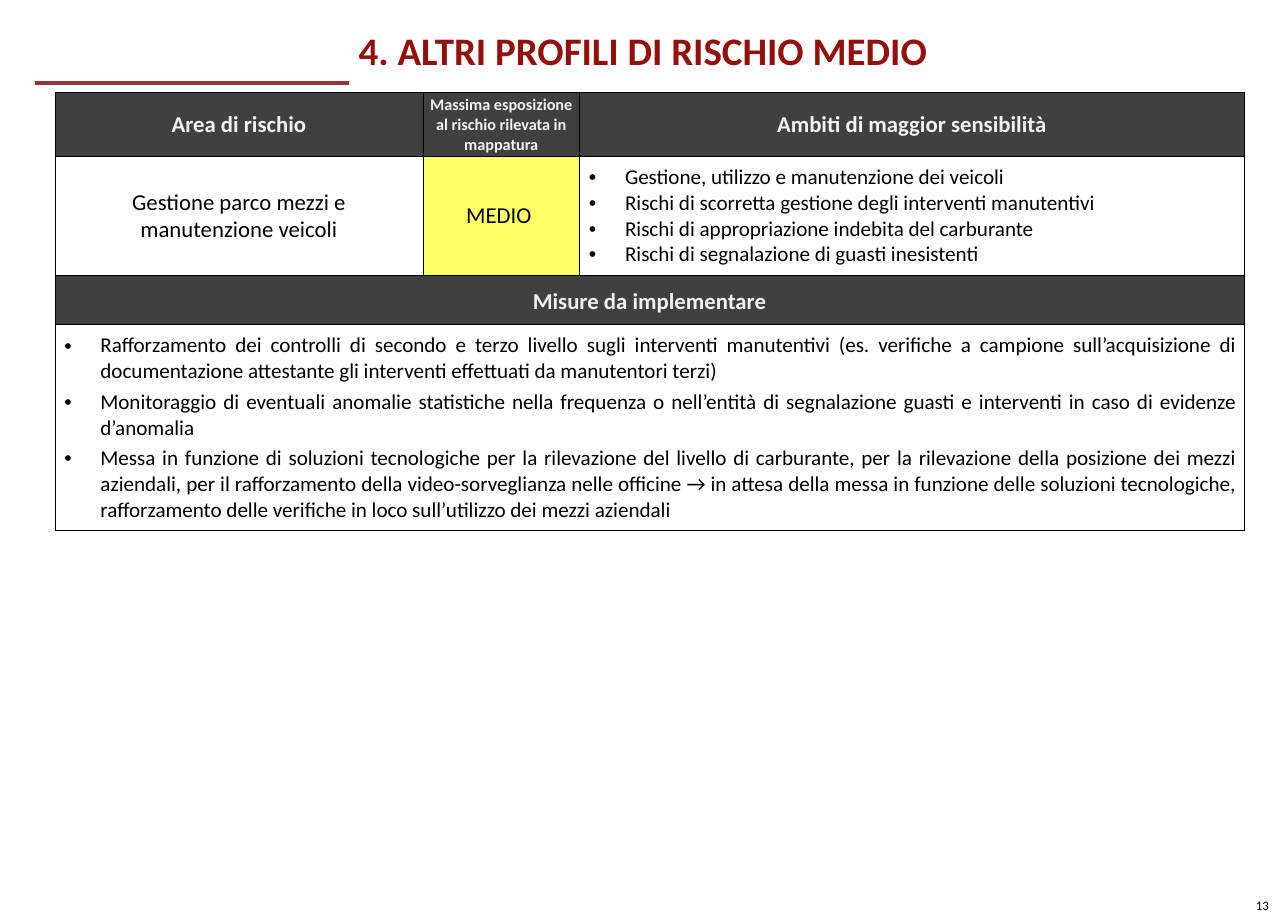
from pptx import Presentation
from pptx.dml.color import RGBColor
from pptx.enum.shapes import MSO_CONNECTOR
from pptx.enum.text import MSO_ANCHOR, PP_ALIGN
from pptx.oxml.ns import qn
from pptx.util import Inches, Pt
from lxml.etree import SubElement

TITLE = "4. ALTRI PROFILI DI RISCHIO MEDIO"
PAGE = "13"
HEADERS = [
    ("Area di rischio", 14),
    ("Massima esposizione al rischio rilevata in mappatura", 10),
    ("Ambiti di maggior sensibilità", 14),
]
AREA = "Gestione parco mezzi e manutenzione veicoli"
LEVEL = "MEDIO"
SENSITIVE = [
    "Gestione, utilizzo e manutenzione dei veicoli",
    "Rischi di scorretta gestione degli interventi manutentivi",
    "Rischi di appropriazione indebita del carburante",
    "Rischi di segnalazione di guasti inesistenti",
]
MEASURES_TITLE = "Misure da implementare"
MEASURES = [
    "Rafforzamento dei controlli di secondo e terzo livello sugli interventi manutentivi "
    "(es. verifiche a campione sull’acquisizione di documentazione attestante gli interventi "
    "effettuati da manutentori terzi)",
    "Monitoraggio di eventuali anomalie statistiche nella frequenza o nell’entità di "
    "segnalazione guasti e interventi in caso di evidenze d’anomalia",
    "Messa in funzione di soluzioni tecnologiche per la rilevazione del livello di carburante, "
    "per la rilevazione della posizione dei mezzi aziendali, per il rafforzamento della "
    "video-sorveglianza nelle officine → in attesa della messa in funzione delle soluzioni "
    "tecnologiche, rafforzamento delle verifiche in loco sull’utilizzo dei mezzi aziendali",
]
COLS = [3.15, 1.34, 5.69]
ROWS = [0.55, 1.02, 0.42, 1.76]
BLACK, WHITE, DARK, LIGHT = "000000", "FFFFFF", "404040", "F2F2F2"


def rgb(color):
    return RGBColor.from_string(color)


def style(p, size, color=BLACK, bold=False):
    for r in p.runs:
        r.font.name = "Calibri"
        r.font.size = Pt(size)
        r.font.bold = bold
        r.font.color.rgb = rgb(color)


def set_insets(box, left, top, right, bottom):
    box.margin_left, box.margin_top = Inches(left), Inches(top)
    box.margin_right, box.margin_bottom = Inches(right), Inches(bottom)


def add_bullet(p):
    pPr = p._p.get_or_add_pPr()
    pPr.set("marL", str(Inches(0.31)))
    pPr.set("indent", str(-Inches(0.31)))
    SubElement(pPr, qn("a:buFont"), typeface="Arial")
    SubElement(pPr, qn("a:buChar"), char="•")


def add_borders(cell, widths):
    tcPr = cell._tc.get_or_add_tcPr()
    for side, width in zip("LRTB", widths):
        ln = SubElement(tcPr, qn(f"a:ln{side}"), w=str(Pt(width)))
        SubElement(SubElement(ln, qn("a:solidFill")), qn("a:srgbClr"), val=BLACK)


def fill_cell(cell, lines, size, color=BLACK, bold=False, fill=WHITE, align=PP_ALIGN.CENTER,
              bullets=False, insets=(0.08, 0.07, 0.08, 0.07), after=0, spacing=None):
    cell.fill.solid()
    cell.fill.fore_color.rgb = rgb(fill)
    cell.vertical_anchor = MSO_ANCHOR.MIDDLE
    set_insets(cell, *insets)
    tf = cell.text_frame
    tf.text = "\n".join(lines)
    for p in tf.paragraphs:
        if bullets:
            add_bullet(p)
        p.alignment = align
        p.space_after = Pt(after)
        if spacing:
            p.line_spacing = Pt(spacing)
        style(p, size, color, bold)


prs = Presentation()
prs.slide_width, prs.slide_height = Pt(793.75), Pt(567)
s = prs.slides.add_slide(prs.slide_layouts[5])

rule = s.shapes.add_connector(MSO_CONNECTOR.STRAIGHT, Inches(0.3), Inches(0.71),
                              Inches(2.99), Inches(0.71))
rule.line.color.rgb = rgb("953735")
rule.line.width = Pt(2.25)
SubElement(rule._element.spPr, qn("a:effectLst"))

title = s.shapes.title
title.left, title.top = Inches(3.07), Inches(0.21)
title.width, title.height = Inches(7.6), Inches(0.59)
tf = title.text_frame
tf.text = TITLE
tf.word_wrap = True
tf.vertical_anchor = MSO_ANCHOR.TOP
set_insets(tf, 0, 0, 0, 0)
p = tf.paragraphs[0]
p.alignment = PP_ALIGN.LEFT
p.line_spacing = Pt(30)
style(p, 24, "93100D", True)

table = s.shapes.add_table(len(ROWS), len(COLS), Inches(0.47), Inches(0.79),
                           Inches(sum(COLS)), Inches(sum(ROWS))).table
table.first_row = table.horz_banding = False
for col, width in zip(table.columns, COLS):
    col.width = Inches(width)
for row, height in zip(table.rows, ROWS):
    row.height = Inches(height)
for i in range(len(ROWS)):
    for j in range(len(COLS)):
        right = 1 if (i, j) == (0, 2) else 0.5
        add_borders(table.cell(i, j), (0.5, right, 0.5 if i else 1, 0.5))
for i in (2, 3):
    table.cell(i, 0).merge(table.cell(i, 2))

for j, (label, size) in enumerate(HEADERS):
    fill_cell(table.cell(0, j), [label], size, LIGHT, True, DARK, insets=(0.01, 0.01, 0.01, 0))
fill_cell(table.cell(1, 0), [AREA], 14)
fill_cell(table.cell(1, 1), [LEVEL], 14, fill="FFFF66", insets=(0.08, 0.07, 0.12, 0.07))
fill_cell(table.cell(1, 2), SENSITIVE, 13, align=PP_ALIGN.LEFT, bullets=True)
fill_cell(table.cell(2, 0), [MEASURES_TITLE], 14, LIGHT, True, DARK, spacing=19.2)
fill_cell(table.cell(3, 0), MEASURES, 13, align=PP_ALIGN.JUSTIFY, bullets=True, after=3)

number = s.shapes.add_textbox(Inches(10.65), Inches(7.63), Inches(0.35), Inches(0.24))
number.text_frame.text = PAGE
number.text_frame.word_wrap = False
style(number.text_frame.paragraphs[0], 8)

prs.save("out.pptx")
